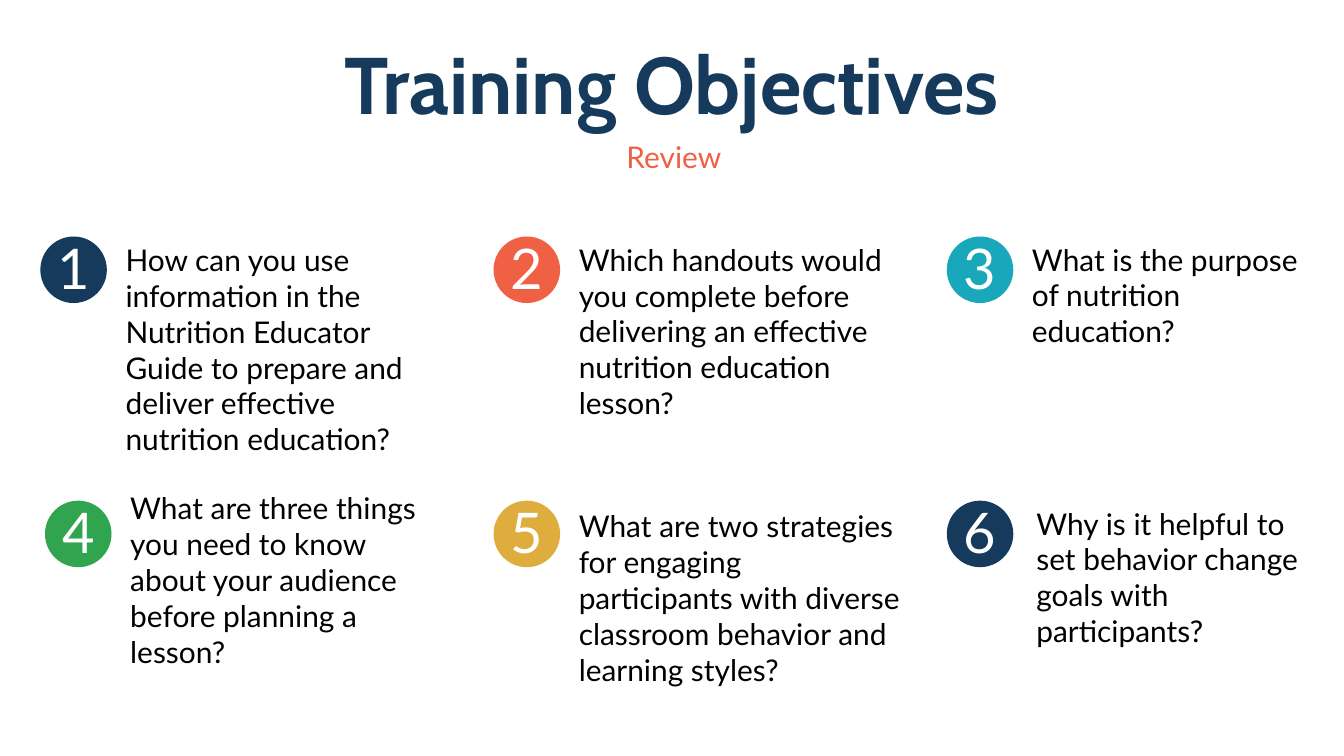
"""Build the Training Objectives review slide with six numbered questions."""
from pptx import Presentation
from pptx.dml.color import RGBColor
from pptx.enum.shapes import MSO_SHAPE
from pptx.enum.text import MSO_ANCHOR, MSO_AUTO_SIZE, PP_ALIGN
from pptx.util import Pt

ROUNDED = MSO_SHAPE.ROUNDED_RECTANGLE
TOP, MIDDLE = MSO_ANCHOR.TOP, MSO_ANCHOR.MIDDLE
LEFT, CENTER = PP_ALIGN.LEFT, PP_ALIGN.CENTER
GROW = MSO_AUTO_SIZE.SHAPE_TO_FIT_TEXT

NAVY, CORAL, TEAL = "153A5C", "F06044", "19A8BB"
GREEN, GOLD, WHITE, BLACK = "30A44E", "DFAD3D", "FFFFFF", "000000"

# question, badge colour, badge shift, question (left offset, top, width, height)
QUESTIONS = [
    ("How can you use information in the Nutrition Educator Guide to prepare "
     "and deliver effective nutrition education?",
     NAVY, 0, (91.3, 257.8, 339.1, 232.6)),
    ("Which handouts would you complete before delivering an effective "
     "nutrition education lesson?",
     CORAL, 0, (91.3, 257.8, 344.9, 193.7)),
    ("What is the purpose of nutrition education?",
     TEAL, 0, (91.3, 257.8, 290.9, 116.6)),
    ("What are three things you need to know about your audience before "
     "planning a lesson?",
     GREEN, 5, (91.3, 543.6, 334.8, 154.8)),
    ("What are two strategies for engaging participants with diverse "
     "classroom behavior and learning styles?",
     GOLD, 0, (91.3, 543.6, 344.9, 193.7)),
    ("Why is it helpful to set behavior change goals with participants?",
     NAVY, 0, (96, 540.7, 290.9, 154.8)),
]

COLUMNS = 3
GRID_LEFT, GRID_TOP = 43.2, 253.4
COLUMN_STEP, ROW_STEP = 485.6, 283
BADGE = 71.3
NUMBER_WIDTH, NUMBER_HEIGHT, NUMBER_RISE = 65.5, 80, 7.2
HEADING_INSETS, NUMBER_INSETS, NO_INSETS = (10.8, 5), (7.2, 3.6), (0, 0)


def rgb(hex_color):
    return RGBColor.from_string(hex_color)


def add_text(slide, text, box, size, color, font="Lato", bold=False,
             align=LEFT, anchor=TOP, insets=NO_INSETS):
    frame = slide.shapes.add_textbox(*map(Pt, box)).text_frame
    frame.word_wrap = True
    frame.auto_size = GROW
    frame.vertical_anchor = anchor
    frame.margin_left = frame.margin_right = Pt(insets[0])
    frame.margin_top = frame.margin_bottom = Pt(insets[1])
    frame.text = text
    paragraph = frame.paragraphs[0]
    paragraph.alignment = align
    style = paragraph.runs[0].font
    style.name, style.size, style.bold = font, Pt(size), bold
    style.color.rgb = rgb(color)


def add_badge(slide, number, left, top, color):
    badge = slide.shapes.add_shape(ROUNDED, *map(Pt, (left, top, BADGE, BADGE)))
    badge.adjustments[0] = 0.5
    badge.shadow.inherit = False
    badge.fill.solid()
    badge.fill.fore_color.rgb = rgb(color)
    badge.line.fill.background()
    number_left = left + (BADGE - NUMBER_WIDTH) / 2
    add_text(slide, str(number),
             (number_left, top - NUMBER_RISE, NUMBER_WIDTH, NUMBER_HEIGHT),
             60, WHITE, align=CENTER, anchor=MIDDLE, insets=NUMBER_INSETS)


def main():
    deck = Presentation()
    deck.slide_width, deck.slide_height = Pt(1440), Pt(810)
    slide = deck.slides.add_slide(deck.slide_layouts[6])

    add_text(slide, "Review", (307.4, 143.3, 829.4, 49.7), 32, CORAL,
             align=CENTER, insets=HEADING_INSETS)
    add_text(slide, "Training Objectives", (166.3, 31.7, 1106.6, 115.2), 86,
             NAVY, font="Cabin", bold=True, align=CENTER, insets=HEADING_INSETS)

    for index, (question, color, shift, place) in enumerate(QUESTIONS):
        row, column = divmod(index, COLUMNS)
        left = GRID_LEFT + column * COLUMN_STEP + shift
        offset, top, width, height = place
        add_badge(slide, index + 1, left, GRID_TOP + row * ROW_STEP, color)
        add_text(slide, question, (left + offset, top, width, height), 32,
                 BLACK, anchor=MIDDLE)

    deck.save("out.pptx")


if __name__ == "__main__":
    main()
